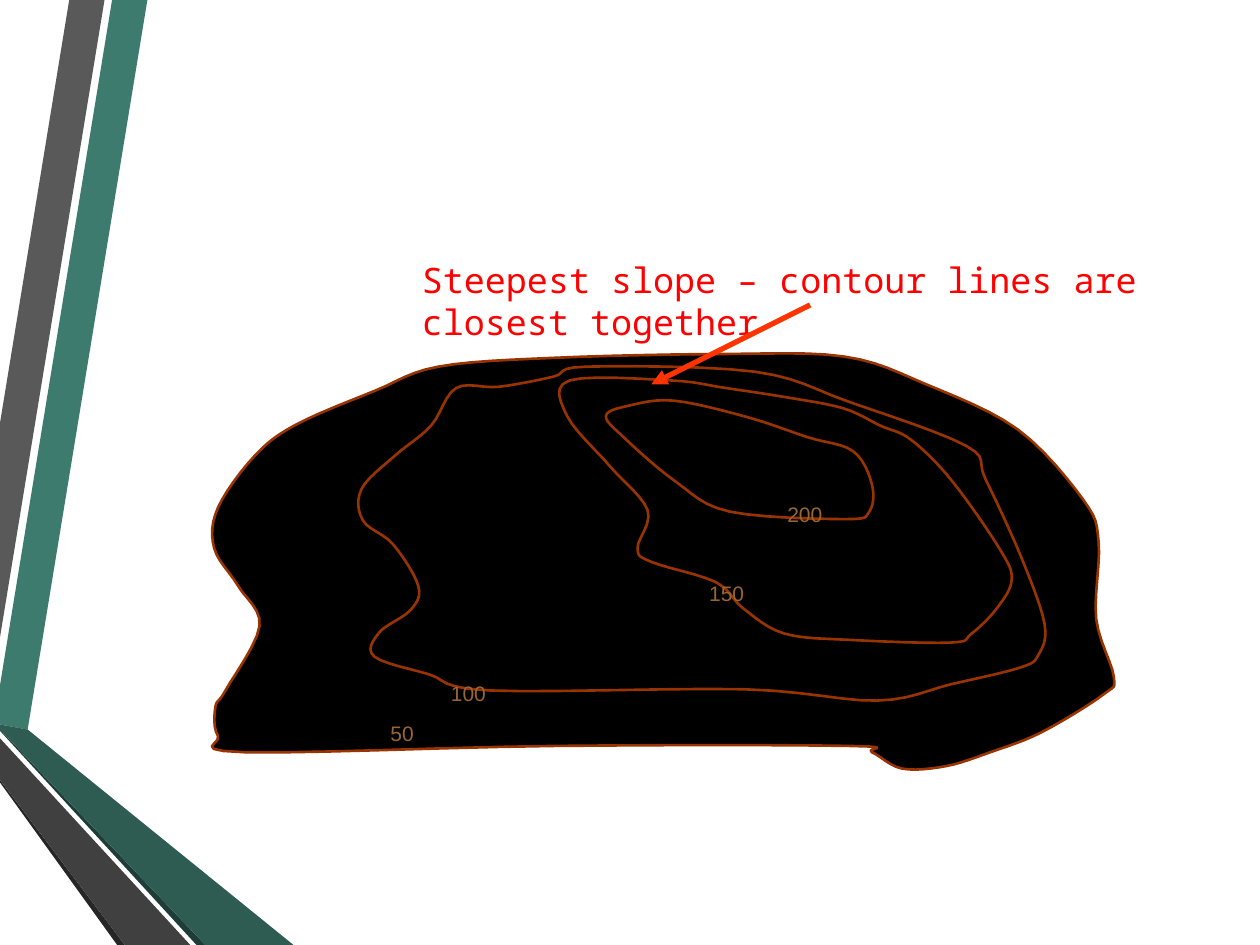
from lxml import etree
from pptx import Presentation
from pptx.dml.color import RGBColor
from pptx.enum.shapes import MSO_CONNECTOR
from pptx.enum.text import MSO_ANCHOR
from pptx.oxml.ns import qn
from pptx.util import Inches, Pt

STRAIGHT = MSO_CONNECTOR.STRAIGHT
TOP = MSO_ANCHOR.TOP
STEPS = 6

HUES = {
    "teal": "3D7B6F", "gray": "595959", "coal": "262626", "pine": "1F3D38",
    "moss": "2E5C53", "slate": "404040", "land": "000000", "rim": "993300",
    "label": "996633", "note": "FF0000", "arrow": "FF3300",
}

BANDS = [
    ("teal", [(0, 5.44), (0, 5.75), (0.22, 5.79), (1.17, 0), (0.89, 0)]),
    ("gray", [(0.83, 0), (0.55, 0), (0, 3.36), (0, 5.06)]),
    ("coal", [(0, 6.19), (0, 6.21), (0.93, 7.5), (0.99, 7.5)]),
    ("pine", [(0, 5.79), (0, 5.8), (1.56, 7.5), (1.63, 7.5)]),
    ("moss", [(0, 5.79), (1.63, 7.5), (2.33, 7.5), (0.22, 5.79), (0, 5.75)]),
    ("slate", [(0, 6.19), (0.99, 7.5), (1.51, 7.5), (0, 5.86)]),
]

RINGS = [
    [(1.89, 4.65), (2.06, 4.97), (1.79, 5.48), (1.71, 5.61), (1.73, 5.84),
     (1.94, 5.97), (4.4, 5.92), (6.74, 5.92), (6.92, 5.97), (7.16, 6.1),
     (7.51, 6.08), (7.86, 5.97), (8.27, 5.81), (8.76, 5.51), (8.84, 5.37),
     (8.7, 4.91), (8.72, 4.3), (8.6, 3.97), (8.08, 3.41), (7.35, 3.05),
     (6.7, 2.83), (5.71, 2.81), (4.4, 2.84), (3.48, 2.91), (2.98, 3.1),
     (2.35, 3.37), (2.02, 3.62), (1.73, 4.03), (1.7, 4.35)],
    [(3.62, 3.08), (3.96, 3.07), (4.39, 2.99), (4.66, 2.91), (5.99, 2.95),
     (6.74, 3.19), (7.67, 3.54), (7.82, 3.8), (8.1, 4.41), (8.29, 4.95),
     (8.24, 5.2), (8.09, 5.3), (7.55, 5.43), (6.96, 5.56), (5.9, 5.47),
     (3.89, 5.48), (3.4, 5.35), (2.97, 5.21), (3.01, 5.02), (3.26, 4.84),
     (3.32, 4.65), (3.12, 4.32), (2.88, 4.13), (2.87, 3.88), (3.13, 3.62),
     (3.42, 3.38)],
    [(4.52, 3.02), (5.33, 3.02), (5.76, 3.08), (6.22, 3.15), (6.69, 3.24),
     (6.99, 3.38), (7.23, 3.49), (7.55, 3.81), (7.93, 4.35), (8.03, 4.6),
     (7.91, 4.83), (7.71, 5.03), (7.55, 5.1), (6.77, 5.08), (6.23, 5.03),
     (5.9, 4.83), (5.68, 4.62), (5.17, 4.46), (5.06, 4.35), (5.14, 4.05),
     (4.84, 3.7), (4.5, 3.3)],
    [(4.99, 3.22), (5.35, 3.18), (5.93, 3.31), (6.41, 3.47), (6.77, 3.58),
     (6.92, 3.84), (6.9, 4.06), (6.71, 4.12), (5.79, 4.06), (5.36, 3.82),
     (4.95, 3.47), (4.81, 3.3)],
]

LABELS = [("50", 3, 5.67, 0.55), ("100", 3.48, 5.35, 0.55),
          ("150", 5.53, 4.56, 0.71), ("200", 6.15, 3.93, 0.87)]


def tint(name):
    return RGBColor.from_string(HUES[name])


def blend(a, b, c, d, t):
    return b + t * (c - a + t * (2 * a - 5 * b + 4 * c - d + t * (3 * b - a - 3 * c + d))) / 2


def smooth(knots):
    dots = []
    for i in range(len(knots)):
        near = [knots[(i + k) % len(knots)] for k in (-1, 0, 1, 2)]
        for step in range(STEPS):
            dots.append(tuple(blend(*axis, step / STEPS) for axis in zip(*near)))
    return dots


def outline(slide, box, dots, fill, rim=None):
    spots = [(box[0] + Inches(x), box[1] + Inches(y)) for x, y in dots]
    pen = slide.shapes.build_freeform(*spots[0], scale=1.0)
    pen.add_line_segments(spots[1:], close=True)
    shape = pen.convert_to_shape()
    shape.shadow.inherit = False
    shape.fill.solid()
    shape.fill.fore_color.rgb = tint(fill)
    if rim:
        shape.line.color.rgb = tint(rim)
        shape.line.width = Pt(1.5)
    else:
        shape.line.fill.background()


def write(slide, text, left, top, width, height, font="Arial", size=12, hue="label"):
    frame = slide.shapes.add_textbox(left, top, width, height).text_frame
    frame.word_wrap = True
    frame.vertical_anchor = TOP
    run = frame.paragraphs[0].add_run()
    run.text = text
    run.font.name, run.font.size = font, Pt(size)
    run.font.color.rgb = tint(hue)


def draw_bands(slide, box):
    for fill, dots in BANDS:
        outline(slide, box, dots, fill)


def draw_map(slide, box):
    for knots in RINGS:
        outline(slide, box, smooth(knots), "land", "rim")
    for text, x, y, wide in LABELS:
        write(slide, text, box[0] + Inches(x), box[1] + Inches(y), Inches(wide), Inches(0.3))


def draw_note(slide, box):
    left, top, width, height = box
    write(slide, "Steepest slope – contour lines are closest together", left, top,
          width, height, font="Noto Sans Mono", size=20, hue="note")
    arrow = slide.shapes.add_connector(
        STRAIGHT, left + Inches(3.18), top + Inches(0.42),
        left + Inches(1.92), top + Inches(1.05))
    arrow.line.color.rgb = tint("arrow")
    arrow.line.width = Pt(3)
    edge = arrow._element.spPr.find(qn("a:ln"))
    etree.SubElement(edge, qn("a:tailEnd"), type="triangle")
    etree.SubElement(arrow._element.spPr, qn("a:effectLst"))


def main():
    deck = Presentation()
    deck.slide_width, deck.slide_height = Inches(10), Inches(7.5)
    slide = deck.slides.add_slide(deck.slide_layouts[6])
    page = (0, 0, deck.slide_width, deck.slide_height)
    draw_bands(slide, page)
    draw_map(slide, page)
    draw_note(slide, (Inches(3.25), Inches(2), Inches(6.48), Inches(0.44)))
    deck.save("out.pptx")


if __name__ == "__main__":
    main()
